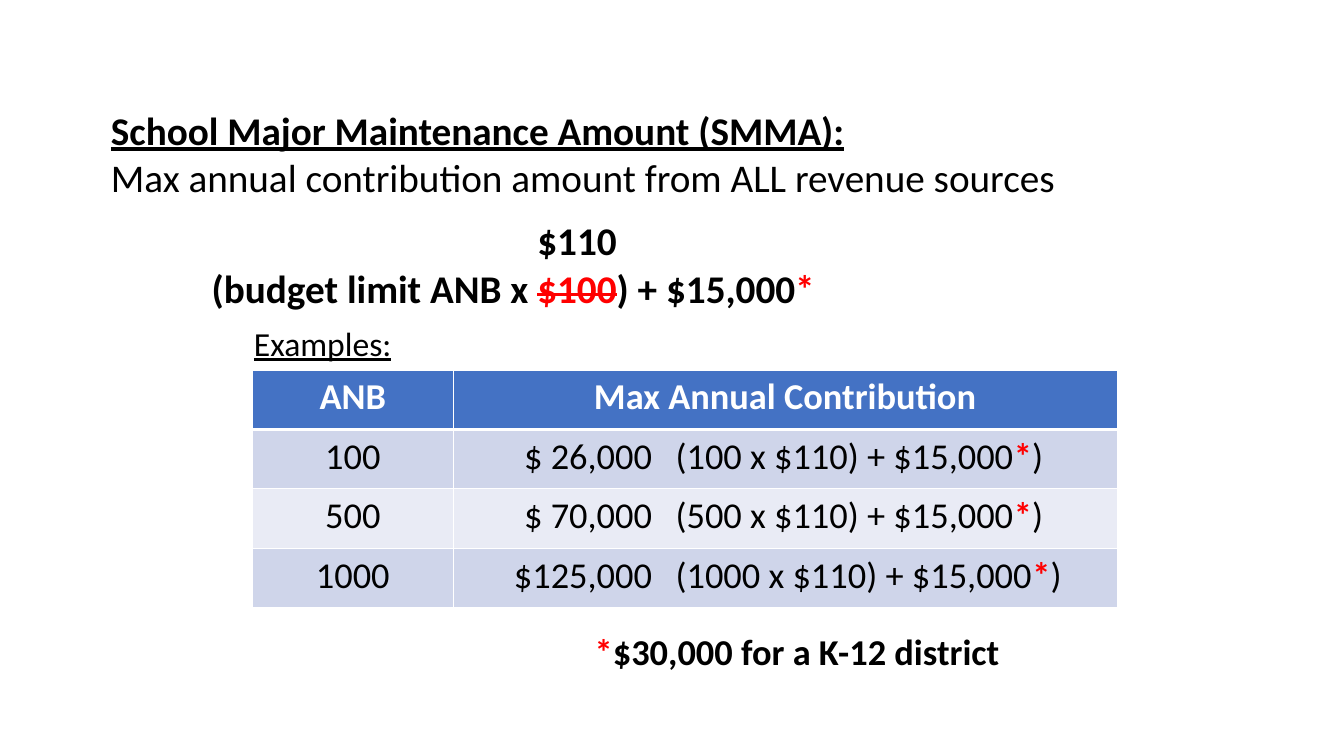
"""Build the School Major Maintenance Amount slide."""
from dataclasses import dataclass

from lxml import etree
from pptx import Presentation
from pptx.dml.color import RGBColor
from pptx.enum.text import MSO_ANCHOR, MSO_AUTO_SIZE, PP_ALIGN
from pptx.oxml.ns import qn
from pptx.util import Inches, Pt

CENTER = PP_ALIGN.CENTER
LEFT = PP_ALIGN.LEFT
TOP = MSO_ANCHOR.TOP
NO_FIT = MSO_AUTO_SIZE.NONE
GROW = MSO_AUTO_SIZE.SHAPE_TO_FIT_TEXT


@dataclass(frozen=True)
class Theme:
    font: str = "Calibri"
    body: int = 28
    table: int = 26
    label: int = 24
    ink: str = "000000"
    accent: str = "FF0000"
    white: str = "FFFFFF"
    header: str = "4472C4"
    bands: tuple = ("CFD5EA", "E9EBF5")


THEME = Theme()
BOLD = {"bold": True}
RED = {"bold": True, "color": THEME.accent}
STAR = ("*", RED)


class SlideBuilder:
    def __init__(self, deck, theme):
        self.theme = theme
        self.page = deck.slides.add_slide(deck.slide_layouts[1])

    def fill_para(self, para, spans, size, align=LEFT):
        para.alignment = align
        for text, style in spans:
            span = para.add_run()
            span.text = text
            values = {"name": self.theme.font, "size": Pt(size), "bold": False}
            values.update(style)
            color = values.pop("color", self.theme.ink)
            strike = values.pop("strike", False)
            for name, value in values.items():
                setattr(span.font, name, value)
            span.font.color.rgb = RGBColor.from_string(color)
            if strike:
                span.font._element.set("strike", "sngStrike")

    def place(self, box, bounds):
        for name, value in zip(("left", "top", "width", "height"), bounds):
            setattr(box, name, Inches(value))

    def body(self, bounds, lines):
        title = self.page.shapes.title
        title.element.getparent().remove(title.element)
        box = self.page.placeholders[1]
        self.place(box, bounds)
        frame = box.text_frame
        frame.auto_size = NO_FIT
        frame.vertical_anchor = TOP
        for index, (indent, after, spans) in enumerate(lines):
            para = frame.paragraphs[0] if index == 0 else frame.add_paragraph()
            self.fill_para(para, spans, self.theme.body)
            para.space_before = Pt(0)
            para.space_after = Pt(after)
            para.line_spacing = 1.0
            props = para._p.get_or_add_pPr()
            props.set("marL", str(Inches(indent)))
            props.set("indent", "0")
            etree.SubElement(props, qn("a:buNone"))

    def label(self, bounds, spans, size, wrap):
        box = self.page.shapes.add_textbox(*map(Inches, bounds))
        box.text_frame.word_wrap = wrap
        box.text_frame.auto_size = GROW
        self.fill_para(box.text_frame.paragraphs[0], spans, size)

    def add_tabs(self, para, stops):
        tabs = etree.SubElement(para._p.get_or_add_pPr(), qn("a:tabLst"))
        for position, align in stops:
            etree.SubElement(tabs, qn("a:tab"), pos=str(Inches(position)), algn=align)

    def add_borders(self, cell, widths):
        props = cell._tc.get_or_add_tcPr()
        for index, (side, width) in enumerate(widths.items()):
            line = etree.Element(qn("a:ln" + side), w=str(Pt(width)))
            fill = etree.SubElement(line, qn("a:solidFill"))
            etree.SubElement(fill, qn("a:srgbClr"), val=self.theme.white)
            props.insert(index, line)

    def table(self, bounds, column_widths, rows, stops):
        shape = self.page.shapes.add_table(
            len(rows), len(column_widths), *map(Inches, bounds))
        grid = shape.table
        for column, width in zip(grid.columns, column_widths):
            column.width = Inches(width)
        for row_index, row in enumerate(rows):
            is_header = row_index == 0
            color = self.theme.header if is_header else self.theme.bands[(row_index - 1) % 2]
            widths = {"L": 1, "R": 1, "T": 3 if row_index == 1 else 1,
                      "B": 3 if is_header else 1}
            for column_index, spans in enumerate(row):
                cell = grid.cell(row_index, column_index)
                cell.fill.solid()
                cell.fill.fore_color.rgb = RGBColor.from_string(color)
                self.add_borders(cell, widths)
                para = cell.text_frame.paragraphs[0]
                is_formula = column_index == 1 and not is_header
                self.fill_para(para, spans, self.theme.table, LEFT if is_formula else CENTER)
                if is_formula:
                    self.add_tabs(para, stops)


def main():
    deck = Presentation()
    deck.slide_width, deck.slide_height = Inches(13.33), Inches(7.5)
    builder = SlideBuilder(deck, THEME)
    builder.body((1, 1, 11.5, 6.33), [
        (0, 0, [("School Major Maintenance Amount (SMMA):",
                 {"bold": True, "underline": True})]),
        (0, 12, [("Max annual contribution amount from ALL revenue sources", {})]),
        (4.23, 0, [("$110", BOLD)]),
        (1, 0, [("(budget limit ANB x ", BOLD), ("$100", {**RED, "strike": True}),
                (") + $15,000", BOLD), STAR]),
    ])
    builder.label((2.42, 3.15, 1.58, 0.5), [("Examples:", {"underline": True})],
                  THEME.label, False)
    heading = {"bold": True, "color": THEME.white}
    rows = [[[(text, heading)] for text in ("ANB", "Max Annual Contribution")]]
    for count, amount in (("100", "$ 26,000"), ("500", "$ 70,000"), ("1000", "$125,000")):
        formula = f"\t{amount}\t({count} x $110) + $15,000"
        rows.append([[(count, {})], [(formula, {}), STAR, (")", {})]])
    builder.table((2.5, 3.67, 8.58, 2.36), (2, 6.58), rows, [(1.87, "r"), (2.1, "l")])
    builder.label((5.8, 6.19, 4.33, 0.54), [STAR, ("$30,000 for a K-12 district", BOLD)],
                  THEME.table, True)
    deck.save("out.pptx")


if __name__ == "__main__":
    main()
